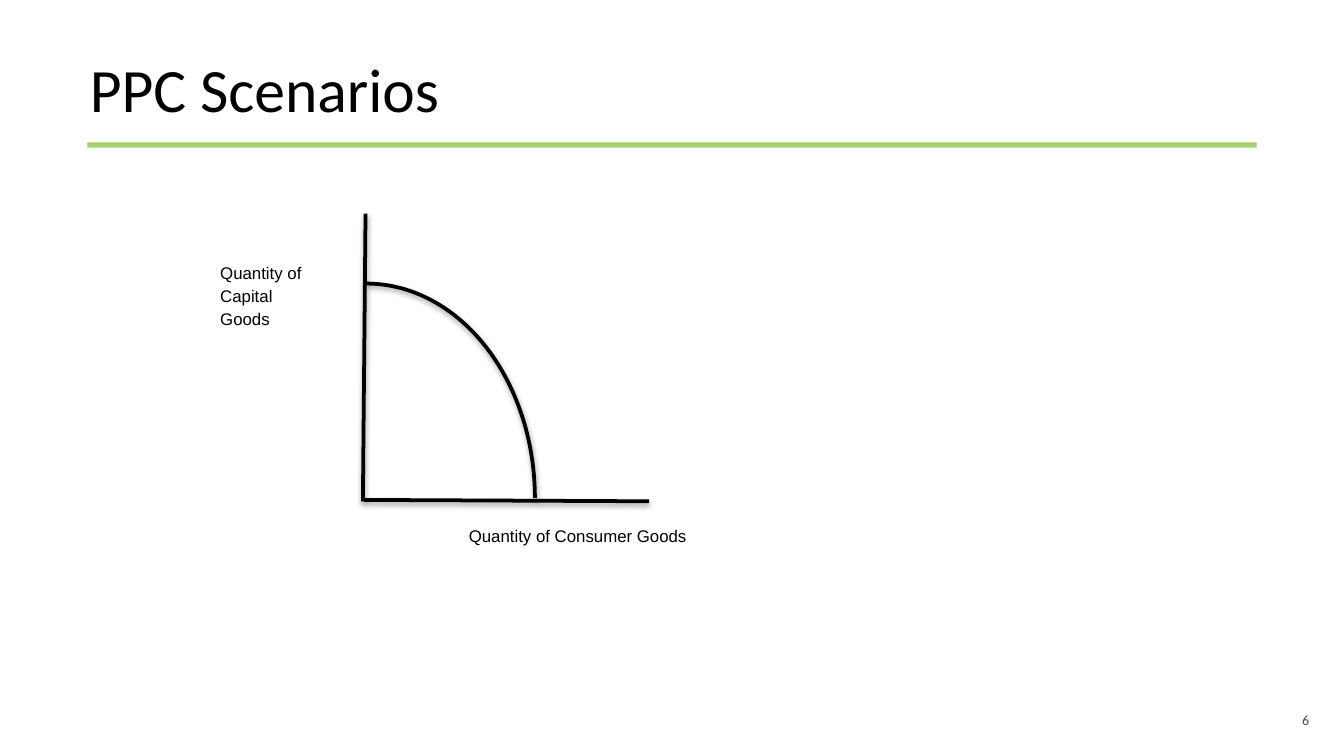
from lxml import etree
from pptx import Presentation
from pptx.dml.color import RGBColor
from pptx.enum import shapes, text
from pptx.oxml import ns
from pptx.util import Inches, Pt

BLACK = RGBColor(0, 0, 0)
WHITE = RGBColor(255, 255, 255)
GREEN = RGBColor(0xA7, 0xCE, 0x6F)
SLATE = RGBColor(0x41, 0x4A, 0x58)
WIDE = 10
HIGH = WIDE * 9 / 16

# Content: lines, box, size, font, colour, line spacing
TITLE = (["PPC Scenarios"], (0.57, 0.39, 8.75, 0.74), 33, "Calibri", BLACK, 0.9)
PAGE = (["6"], (7.06, 5.21, 2.78, 0.3), 7.5, "Calibri", SLATE, 1)
LABELS = [
    (["Quantity of", "Capital", "Goods"], (1.54, 1.88, 1.09, 1), 9, "Arial", BLACK, 1.15),
    (["Quantity of Consumer Goods"], (3.39, 3.84, 2.2, 0.38), 9, "Arial", BLACK, 1.15),
]
AXES = [(2.72, 1.59, 2.7, 3.73), (2.71, 3.72, 4.83, 3.73)]
CURVE = (1.47, 2.11, 2.51, 3.19)
RULE = (0.65, 1.06, WIDE - 2 * 0.65, 0.04)


def place(box):
    return [Inches(n) for n in box]


def write(lines, box, size, face, color, space):
    area = slide.shapes.add_textbox(*place(box))
    frame = area.text_frame
    frame.word_wrap = True
    frame.text = "\n".join(lines)
    for par in frame.paragraphs:
        par.line_spacing = space
        par.font.size = Pt(size)
        par.font.name = face
        par.font.color.rgb = color
    return area


def ink(shape):
    """Black stroke with a soft shadow straight below."""
    shape.line.color.rgb = BLACK
    shape.line.width = Pt(2)
    props = shape._element.spPr
    effect = etree.SubElement(props, ns.qn("a:effectLst"))
    shade = etree.SubElement(
        effect, ns.qn("a:outerShdw"), blurRad=str(Pt(3.1)), dist=str(Pt(1.6)),
        dir="5400000", rotWithShape="0")
    tone = etree.SubElement(shade, ns.qn("a:srgbClr"), val=str(BLACK))
    etree.SubElement(tone, ns.qn("a:alpha"), val="38000")


deck = Presentation()
deck.slide_width, deck.slide_height = Inches(WIDE), Inches(HIGH)
slide = deck.slides.add_slide(deck.slide_layouts[6])

# Title, rule and page number
rule = slide.shapes.add_shape(shapes.MSO_SHAPE.RECTANGLE, *place(RULE))
rule.shadow.inherit = False
rule.fill.solid()
rule.fill.fore_color.rgb = GREEN
rule.line.fill.background()
write(*TITLE)
page = write(*PAGE)
page.text_frame.vertical_anchor = text.MSO_ANCHOR.MIDDLE
page.text_frame.paragraphs[0].alignment = text.PP_ALIGN.RIGHT

# Axes and their labels
for ends in AXES:
    ink(slide.shapes.add_connector(shapes.MSO_CONNECTOR.STRAIGHT, *place(ends)))
for label in LABELS:
    area = write(*label)
    area.fill.solid()
    area.fill.fore_color.rgb = WHITE

# Possibilities curve
curve = slide.shapes.add_shape(shapes.MSO_SHAPE.ARC, *place(CURVE))
curve.fill.background()
ink(curve)

deck.save("out.pptx")
